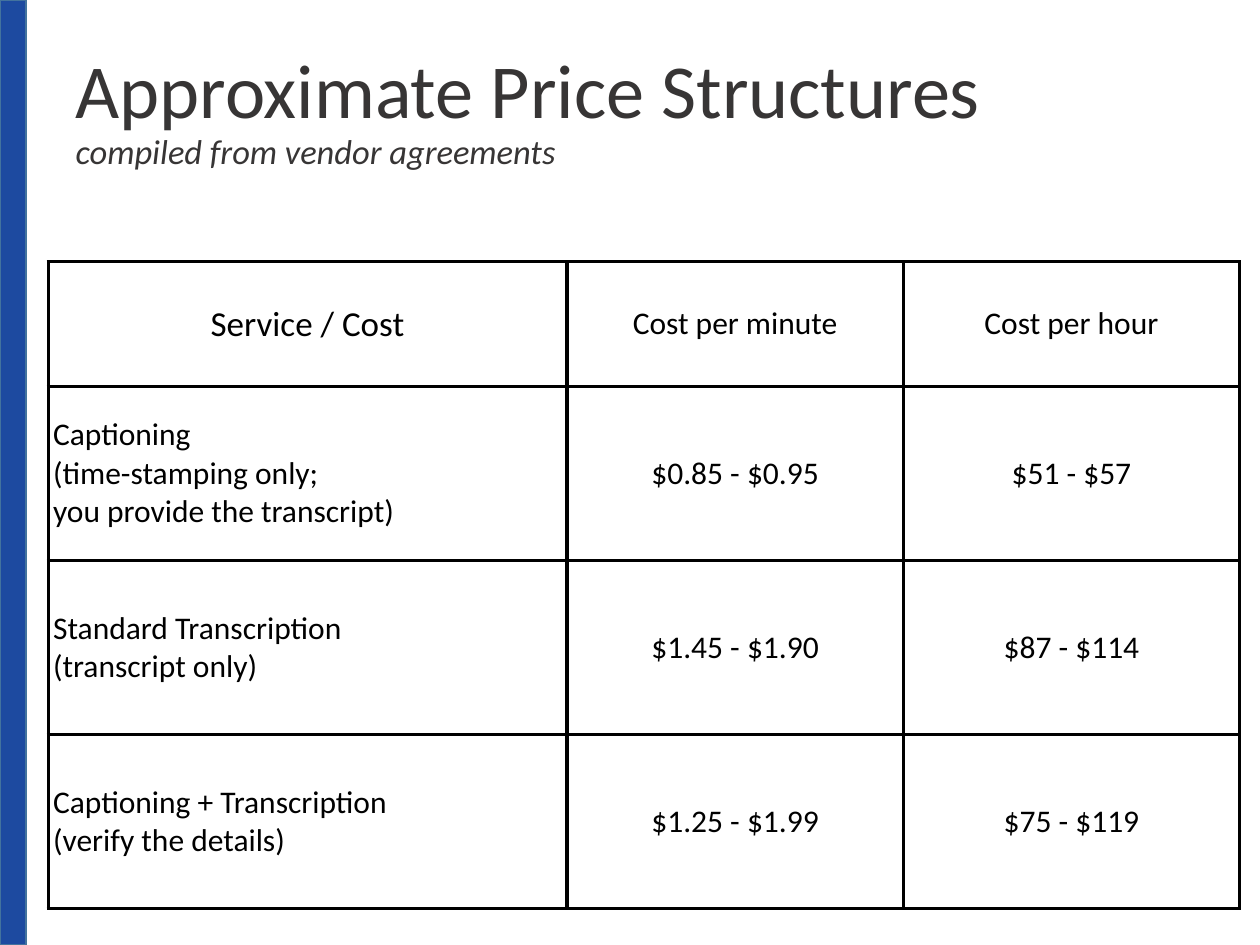
"""Build a slide with a table of approximate captioning and transcription prices."""
from dataclasses import dataclass

from lxml.etree import SubElement
from pptx import Presentation
from pptx.dml.color import RGBColor
from pptx.enum.shapes import MSO_SHAPE
from pptx.enum.text import MSO_ANCHOR, MSO_AUTO_SIZE, PP_ALIGN
from pptx.oxml.ns import qn
from pptx.slide import Slide
from pptx.table import _Cell
from pptx.text.text import _Paragraph
from pptx.util import Cm, Pt

BLUE = RGBColor(0x1D, 0x4A, 0xA0)
BLUE_EDGE = RGBColor(0x43, 0x73, 0x9E)
CHARCOAL = RGBColor(0x37, 0x35, 0x35)
BLACK = RGBColor(0x00, 0x00, 0x00)
FONT = "Calibri"
COLUMN_WIDTHS = (10.46, 6.78, 6.78)
HEADER_HEIGHT, SERVICE_HEIGHT = 2.51, 3.51


@dataclass(frozen=True)
class PriceRow:
    service: tuple[str, ...]
    per_minute: str
    per_hour: str


HEADER = PriceRow(("Service / Cost",), "Cost per minute", "Cost per hour")
SERVICES = (
    PriceRow(("Captioning\n(time-stamping only;\nyou provide the transcript)",),
             "$0.85 - $0.95", "$51 - $57"),
    PriceRow(("Standard Transcription\n(transcript only)",), "$1.45 - $1.90", "$87 - $114"),
    PriceRow(("Captioning + Transcription", "(verify the details)"),
             "$1.25 - $1.99", "$75 - $119"),
)


def add_run(paragraph: _Paragraph, text: str, size: float, color: RGBColor,
            italic: bool = False) -> None:
    run = paragraph.add_run()
    run.text = text
    run.font.name = FONT
    run.font.size = Pt(size)
    run.font.bold = False
    run.font.italic = italic
    run.font.color.rgb = color


def draw_side_bar(slide: Slide) -> None:
    bar = slide.shapes.add_shape(MSO_SHAPE.RECTANGLE, 0, 0, Cm(0.53), Cm(19.05))
    bar.shadow.inherit = False
    bar.fill.solid()
    bar.fill.fore_color.rgb = BLUE
    bar.line.color.rgb = BLUE_EDGE
    bar.line.width = Pt(1)


def fill_title(slide: Slide) -> None:
    title = slide.shapes.title
    title.left, title.top, title.width, title.height = Cm(1.27), Cm(0.43), Cm(21.89), Cm(3.68)
    frame = title.text_frame
    frame.auto_size = MSO_AUTO_SIZE.NONE
    frame.vertical_anchor = MSO_ANCHOR.MIDDLE
    heading = frame.paragraphs[0]
    heading.alignment = PP_ALIGN.LEFT
    heading.line_spacing = 0.9
    add_run(heading, "Approximate Price Structures", 43.6, CHARCOAL)
    heading.add_line_break()
    add_run(heading, "compiled from vendor agreements", 19.7, CHARCOAL, italic=True)


def draw_borders(cell: _Cell) -> None:
    properties = cell._tc.get_or_add_tcPr()
    for position, side in enumerate(("lnL", "lnR", "lnT", "lnB")):
        border = SubElement(properties, qn(f"a:{side}"), w=str(Pt(2)))
        fill = SubElement(border, qn("a:solidFill"))
        SubElement(fill, qn("a:srgbClr"), val=str(BLACK))
        properties.insert(position, border)


def fill_cell(cell: _Cell, paragraphs: tuple[str, ...], size: float,
              alignment: PP_ALIGN, inset: float) -> None:
    cell.fill.background()
    cell.vertical_anchor = MSO_ANCHOR.MIDDLE
    cell.margin_left = cell.margin_right = cell.margin_top = cell.margin_bottom = Cm(inset)
    frame = cell.text_frame
    for index, text in enumerate(paragraphs):
        paragraph = frame.add_paragraph() if index else frame.paragraphs[0]
        paragraph.alignment = alignment
        for number, line in enumerate(text.split("\n")):
            if number:
                paragraph.add_line_break()
            add_run(paragraph, line, size, BLACK)
    draw_borders(cell)


def draw_price_table(slide: Slide) -> None:
    prices = (HEADER, *SERVICES)
    heights = (HEADER_HEIGHT, *(SERVICE_HEIGHT for _ in SERVICES))
    table = slide.shapes.add_table(len(prices), len(COLUMN_WIDTHS), Cm(0.97), Cm(5.28),
                                   Cm(sum(COLUMN_WIDTHS)), Cm(sum(heights))).table
    table.first_row = table.horz_banding = False
    for column, width in zip(table.columns, COLUMN_WIDTHS):
        column.width = Cm(width)
    for row, height, price in zip(table.rows, heights, prices):
        row.height = Cm(height)
        is_header = price is HEADER
        service, per_minute, per_hour = row.cells
        fill_cell(service, price.service, 20 if is_header else 18,
                  PP_ALIGN.CENTER if is_header else PP_ALIGN.LEFT, 0.1)
        for cell, amount in ((per_minute, price.per_minute), (per_hour, price.per_hour)):
            fill_cell(cell, (amount,), 18, PP_ALIGN.CENTER, 0.1 if is_header else 0.13)


def main() -> None:
    presentation = Presentation()
    presentation.slide_width, presentation.slide_height = Cm(25.4), Cm(19.05)
    slide = presentation.slides.add_slide(presentation.slide_layouts[5])
    draw_side_bar(slide)
    fill_title(slide)
    draw_price_table(slide)
    presentation.save("out.pptx")


if __name__ == "__main__":
    main()
